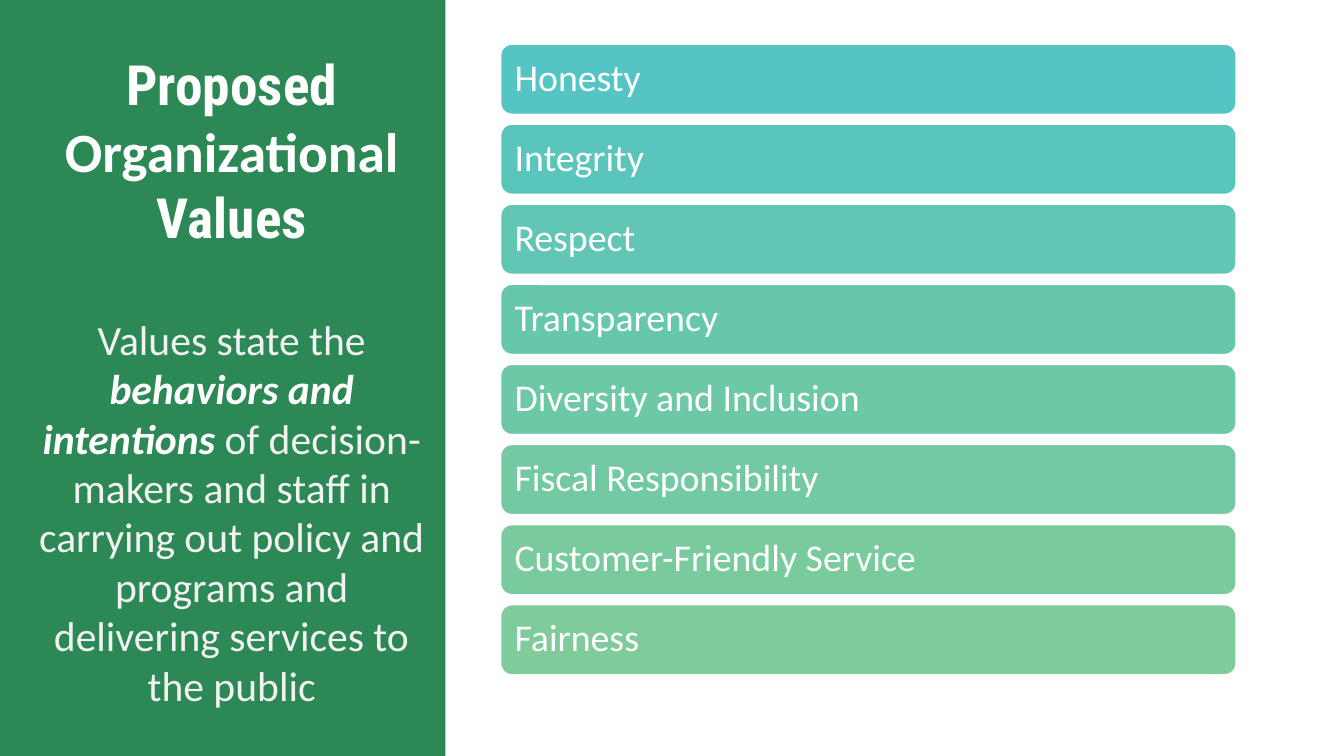
from pptx import Presentation
from pptx.dml.color import RGBColor
from pptx.enum.shapes import MSO_SHAPE
from pptx.enum.text import MSO_ANCHOR, MSO_AUTO_SIZE, PP_ALIGN
from pptx.util import Pt

ROUNDED = MSO_SHAPE.ROUNDED_RECTANGLE
MIDDLE, TOP = MSO_ANCHOR.MIDDLE, MSO_ANCHOR.TOP
LEFT, CENTER = PP_ALIGN.LEFT, PP_ALIGN.CENTER
NO_AUTOFIT = MSO_AUTO_SIZE.NONE

WHITE = RGBColor(0xFF, 0xFF, 0xFF)
PALE = RGBColor(0xF2, 0xF2, 0xF2)
GREEN = RGBColor(0x2C, 0x88, 0x55)
BODY_FONT = "Calibri"
HEAD_FONT = "Roboto Condensed"

VALUES = [
    ("Honesty", RGBColor(0x54, 0xC4, 0xC4)),
    ("Integrity", RGBColor(0x5A, 0xC5, 0xBB)),
    ("Respect", RGBColor(0x61, 0xC6, 0xB3)),
    ("Transparency", RGBColor(0x67, 0xC7, 0xAC)),
    ("Diversity and Inclusion", RGBColor(0x6D, 0xC8, 0xA6)),
    ("Fiscal Responsibility", RGBColor(0x73, 0xC9, 0xA1)),
    ("Customer-Friendly Service", RGBColor(0x79, 0xCA, 0x9D)),
    ("Fairness", RGBColor(0x7F, 0xCB, 0x9A)),
]
BAR_LEFT, BAR_TOP, BAR_WIDTH, BAR_HEIGHT = 357.1, 31, 526.3, 51.1
BAR_PITCH = 57.2


def add_run(p, text, size, color=WHITE, font=BODY_FONT, bold=False, italic=False):
    r = p.add_run()
    r.text = text
    r.font.size = Pt(size)
    r.font.name = font
    r.font.color.rgb = color
    r.font.bold = bold
    r.font.italic = italic


def fill_title_panel(s):
    title = s.shapes.title
    title.left, title.top, title.width, title.height = Pt(0), Pt(0), Pt(318.2), Pt(540)
    title.fill.solid()
    title.fill.fore_color.rgb = GREEN
    tf = title.text_frame
    tf.word_wrap = True
    tf.auto_size = NO_AUTOFIT
    tf.vertical_anchor = TOP
    tf.margin_left, tf.margin_right = Pt(20.2), Pt(7.2)
    tf.margin_top = Pt(36)

    heading = tf.paragraphs[0]
    add_run(heading, "Proposed", 39.6, font=HEAD_FONT, bold=True)
    add_run(heading, " Organizational ", 39.6, bold=True)
    add_run(heading, "Values", 39.6, font=HEAD_FONT, bold=True)

    statement = tf.add_paragraph()
    statement.space_before = Pt(47)
    statement.line_spacing = 0.99
    add_run(statement, "Values state the ", 29.7, PALE)
    add_run(statement, "behaviors and intentions ", 29.7, bold=True, italic=True)
    add_run(statement, "of decision-makers and staff in carrying out policy and "
            "programs and delivering services to the public", 29.7, PALE)

    for p in tf.paragraphs:
        p.alignment = CENTER


def add_value_bar(s, top, text, color):
    sp = s.shapes.add_shape(ROUNDED, Pt(BAR_LEFT), Pt(top), Pt(BAR_WIDTH), Pt(BAR_HEIGHT))
    sp.shadow.inherit = False
    sp.fill.solid()
    sp.fill.fore_color.rgb = color
    sp.line.color.rgb = WHITE
    sp.line.width = Pt(2)
    tf = sp.text_frame
    tf.word_wrap = True
    tf.vertical_anchor = MIDDLE
    tf.margin_left = tf.margin_right = Pt(7.9)
    p = tf.paragraphs[0]
    p.alignment = LEFT
    p.line_spacing = 0.9
    add_run(p, text, 27)


def main():
    prs = Presentation()
    prs.slide_width, prs.slide_height = Pt(960), Pt(540)
    s = prs.slides.add_slide(prs.slide_layouts[5])
    fill_title_panel(s)
    for i, (text, color) in enumerate(VALUES):
        add_value_bar(s, BAR_TOP + i * BAR_PITCH, text, color)
    prs.save("out.pptx")


if __name__ == "__main__":
    main()
